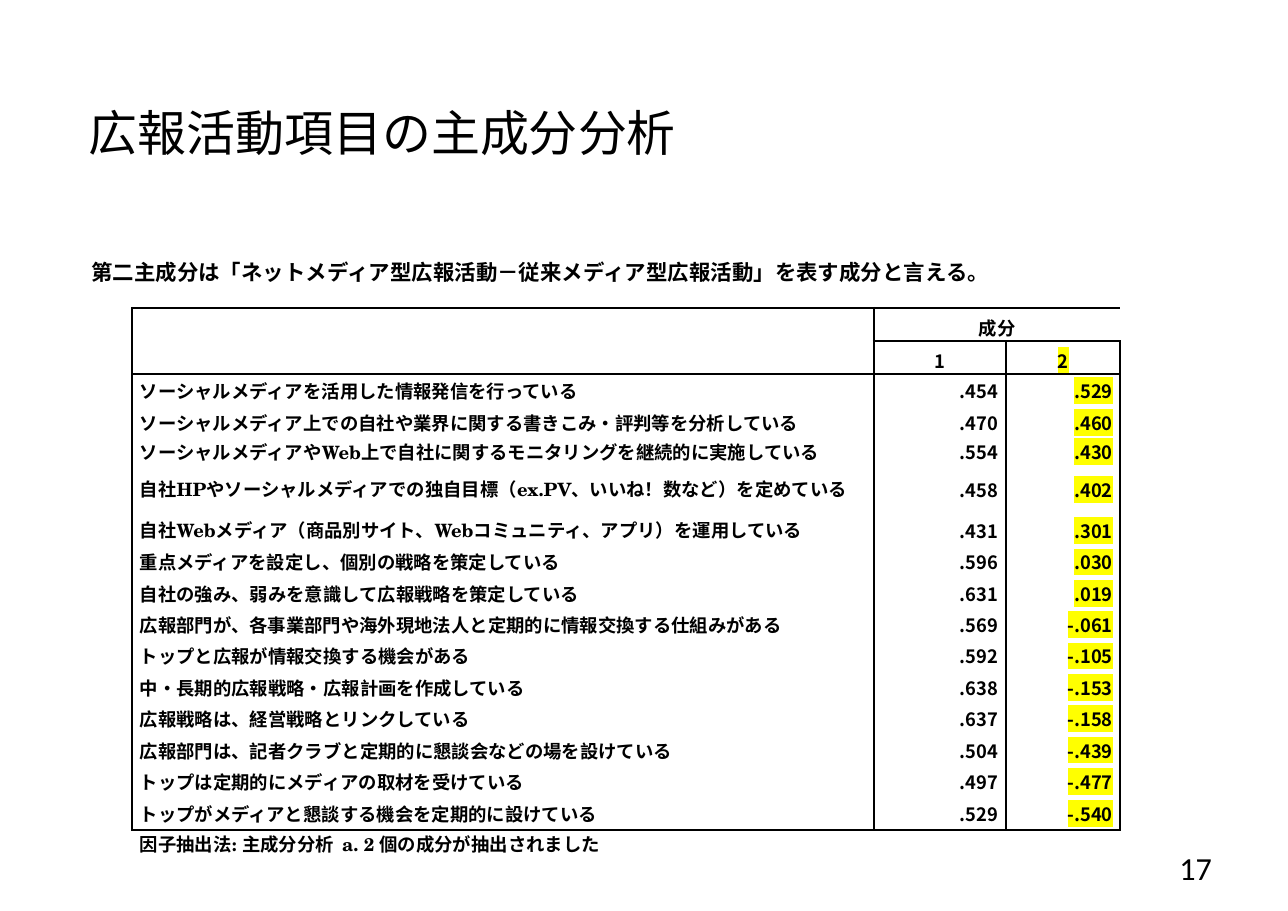
import lxml.etree
import pptx
import pptx.dml.color
import pptx.enum.text
import pptx.oxml.ns
import pptx.util

PX = 4572  # 200 px to the inch
COLORS = {"ink": "000000", "mark": "FFFF00"}
CJK_FONT = "Noto Sans CJK JP"
SERIF_FONT = "TeX Gyre Schola"
ALIGN = pptx.enum.text.PP_ALIGN
ANCHOR = pptx.enum.text.MSO_ANCHOR
AUTO_SIZE = pptx.enum.text.MSO_AUTO_SIZE

HEADER_ROWS = 2
COLUMN_WIDTHS = [1346, 240, 208]
ROW_HEIGHTS = [60, 60, 59, 58, 47, 92] + [57] * 9 + [59, 60]
LOADINGS = [
    ("ソーシャルメディアを活用した情報発信を行っている", ".454", ".529"),
    ("ソーシャルメディア上での自社や業界に関する書きこみ・評判等を分析している", ".470", ".460"),
    ("ソーシャルメディアやWeb上で自社に関するモニタリングを継続的に実施している", ".554", ".430"),
    ("自社HPやソーシャルメディアでの独自目標（ex.PV、いいね！数など）を定めている", ".458", ".402"),
    ("自社Webメディア（商品別サイト、Webコミュニティ、アプリ）を運用している", ".431", ".301"),
    ("重点メディアを設定し、個別の戦略を策定している", ".596", ".030"),
    ("自社の強み、弱みを意識して広報戦略を策定している", ".631", ".019"),
    ("広報部門が、各事業部門や海外現地法人と定期的に情報交換する仕組みがある", ".569", "-.061"),
    ("トップと広報が情報交換する機会がある", ".592", "-.105"),
    ("中・長期的広報戦略・広報計画を作成している", ".638", "-.153"),
    ("広報戦略は、経営戦略とリンクしている", ".637", "-.158"),
    ("広報部門は、記者クラブと定期的に懇談会などの場を設けている", ".504", "-.439"),
    ("トップは定期的にメディアの取材を受けている", ".497", "-.477"),
    ("トップがメディアと懇談する機会を定期的に設けている", ".529", "-.540"),
]
NOTE = "因子抽出法: 主成分分析  a. 2 個の成分が抽出されました"
NOTE_ROW = HEADER_ROWS + len(LOADINGS)


def set_values(target, values):
    for name, value in values.items():
        setattr(target, name, value)


def add_child(parent, tag, **attributes):
    return lxml.etree.SubElement(parent, pptx.oxml.ns.qn(tag), attributes)


def write_text(text_frame, text, size, font, bold=False, align=ALIGN.LEFT, marked=False):
    paragraph = text_frame.paragraphs[0]
    paragraph.alignment = align
    run = paragraph.add_run()
    run.text = text
    set_values(run.font, {"size": pptx.util.Pt(size), "name": font, "bold": bold})
    run.font.color.rgb = pptx.dml.color.RGBColor.from_string(COLORS["ink"])
    properties = run.font._element
    add_child(properties, "a:ea", typeface=CJK_FONT)
    if marked:
        highlight = add_child(properties, "a:highlight")
        add_child(highlight, "a:srgbClr", val=COLORS["mark"])
        properties.find(pptx.oxml.ns.qn("a:solidFill")).addnext(highlight)


def place_text(shape, box, inset_x, inset_y, anchor, auto_size=AUTO_SIZE.NONE):
    left, top, width, height = (length * PX for length in box)
    set_values(shape, {"left": left, "top": top, "width": width, "height": height})
    set_values(shape.text_frame, {
        "margin_left": inset_x * PX, "margin_right": inset_x * PX,
        "margin_top": inset_y * PX, "margin_bottom": inset_y * PX,
        "vertical_anchor": anchor, "word_wrap": True, "auto_size": auto_size})
    return shape.text_frame


def row_line(edge, column):
    """Points of the line above row number edge."""
    if edge in (0, HEADER_ROWS, NOTE_ROW):
        return 1.5
    return 1 if edge == 1 and column > 0 else 0


def column_line(edge, row):
    """Points of the line left of column number edge."""
    if row == NOTE_ROW:
        return 0
    if edge == 2:
        return 1 if row > 0 else 0
    return 1.5


def draw_borders(cell, row, column):
    properties = cell._tc.get_or_add_tcPr()
    weights = {"a:lnL": column_line(column, row), "a:lnR": column_line(column + 1, row),
               "a:lnT": row_line(row, column), "a:lnB": row_line(row + 1, column)}
    for tag, points in weights.items():
        line = add_child(properties, tag, w=str(int(pptx.util.Pt(points))))
        if points:
            add_child(add_child(line, "a:solidFill"), "a:srgbClr", val=COLORS["ink"])
        else:
            add_child(line, "a:noFill")


def fill_cell(cell, row, column, text):
    if row == NOTE_ROW:
        anchor = ANCHOR.TOP
    else:
        anchor = ANCHOR.BOTTOM if row < HEADER_ROWS else ANCHOR.MIDDLE
    set_values(cell, {"margin_left": 14 * PX, "margin_right": 14 * PX, "margin_top": 0,
                      "margin_bottom": 0, "vertical_anchor": anchor})
    draw_borders(cell, row, column)
    cell.fill.background()
    if not text:
        add_child(cell.text_frame.paragraphs[0]._p, "a:endParaRPr", sz="1200")
        return
    is_number = column > 0 and row > 0
    if row < HEADER_ROWS:
        align = ALIGN.CENTER
    else:
        align = ALIGN.RIGHT if is_number else ALIGN.LEFT
    write_text(cell.text_frame, text, 12, CJK_FONT if is_number else SERIF_FONT,
               bold=True, align=align, marked=is_number and column == 2)


def add_loadings_table(slide):
    rows = [("", "成分", ""), ("", "1", "2"), *LOADINGS, (NOTE, "", "")]
    table = slide.shapes.add_table(
        len(rows), len(COLUMN_WIDTHS), 240 * PX, 559 * PX,
        sum(COLUMN_WIDTHS) * PX, sum(ROW_HEIGHTS) * PX).table
    set_values(table, {"first_row": False, "horz_banding": False})
    for column, width in zip(table.columns, COLUMN_WIDTHS):
        column.width = width * PX
    for row, height in zip(table.rows, ROW_HEIGHTS):
        row.height = height * PX
    # Header spans and the full-width note
    for first, last in [((0, 0), (1, 0)), ((0, 1), (0, 2)), ((NOTE_ROW, 0), (NOTE_ROW, 2))]:
        table.cell(*first).merge(table.cell(*last))
    for row, texts in enumerate(rows):
        for column, text in enumerate(texts):
            fill_cell(table.cell(row, column), row, column, text)


def add_text(slide, box, inset_x, inset_y, anchor, auto_size, text, **style):
    shape = slide.shapes.add_textbox(0, 0, 0, 0)
    write_text(place_text(shape, box, inset_x, inset_y, anchor, auto_size), text, **style)


def main():
    presentation = pptx.Presentation()
    set_values(presentation, {"slide_width": 2338 * PX, "slide_height": 1654 * PX})
    slide = presentation.slides.add_slide(presentation.slide_layouts[5])

    # Title
    title = place_text(slide.shapes.title, (138, 170, 1624, 140), 22, 12, ANCHOR.MIDDLE)
    write_text(title, "広報活動項目の主成分分析", 32, "Calibri")

    # Finding and page number
    add_text(slide, (146, 460, 2032, 68), 20, 10, ANCHOR.TOP, AUTO_SIZE.SHAPE_TO_FIT_TEXT,
             "第二主成分は「ネットメディア型広報活動－従来メディア型広報活動」を表す成分と言える。",
             size=14, font="Arial", bold=True)
    add_text(slide, (1676, 1532, 546, 88), 22, 12, ANCHOR.MIDDLE, AUTO_SIZE.NONE,
             "17", size=21, font="Calibri", align=ALIGN.RIGHT)

    # Component loadings
    add_loadings_table(slide)
    presentation.save("out.pptx")


if __name__ == "__main__":
    main()
